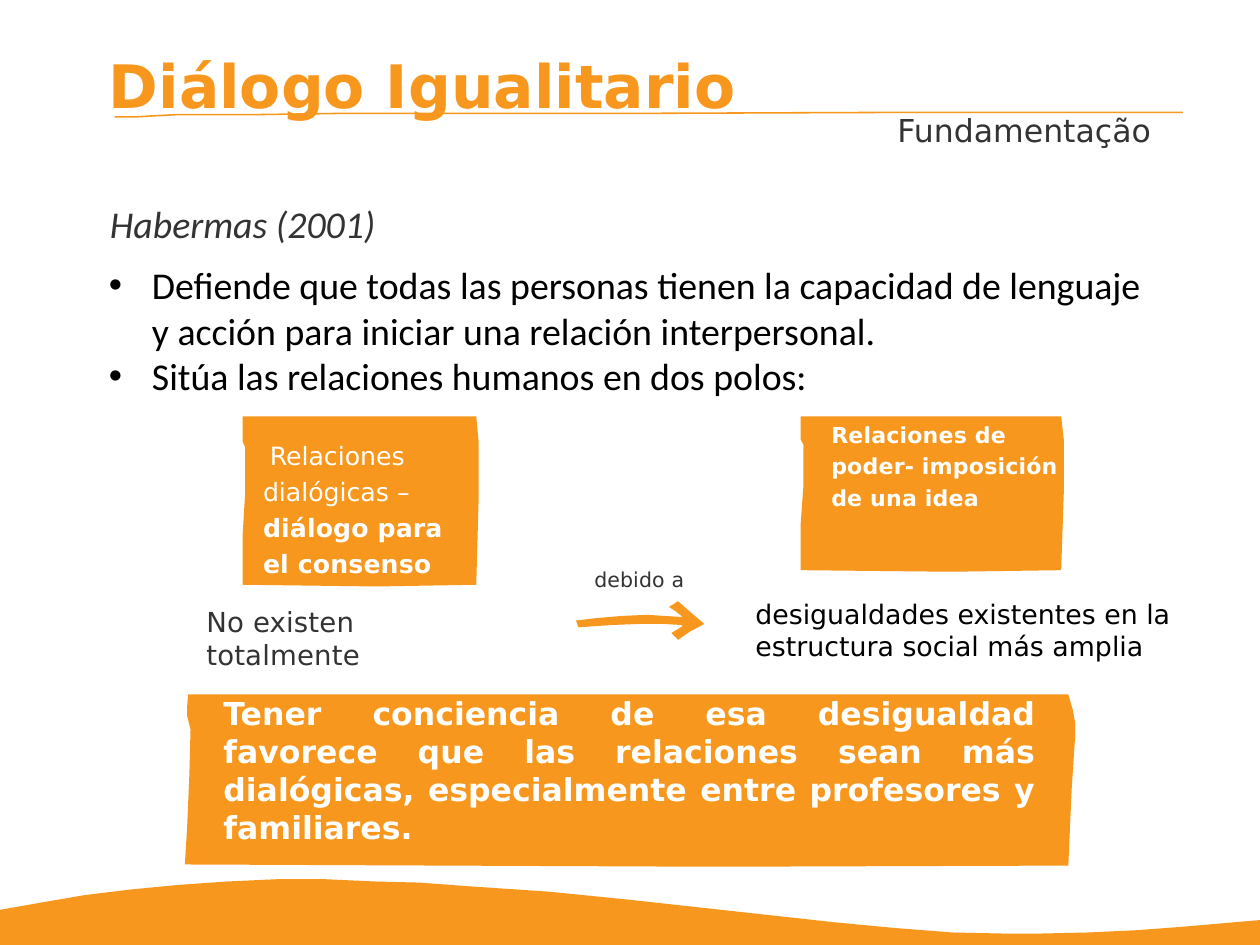
from pptx import Presentation, util as u
from pptx.dml.color import RGBColor
from pptx.enum import text as t
from pptx.oxml.ns import qn
from lxml import etree

INK = {"orange": "F8971D", "grey": "333333", "black": "000000", "white": "FFFFFF"}
SANS, BODY = "DejaVu Sans", "Calibri"


def write(para, words, size=20, font=SANS, ink="grey", bold=False, slant=False,
          track=0, align=t.PP_ALIGN.LEFT, line=None, before=0, left=0, first=0,
          bullet=None):
    """Add a run to a paragraph and set the format of both."""
    run = para.add_run()
    run.text = words
    face = run.font
    face.size, face.name, face.bold, face.italic = u.Pt(size), font, bold, slant
    face.color.rgb = RGBColor.from_string(INK[ink])
    if track:
        run._r.get_or_add_rPr().set("spc", str(round(track * 100)))
    para.alignment = align
    para.space_before = u.Pt(before)
    if line:
        para.line_spacing = line
    props = para._p.get_or_add_pPr()
    props.set("marL", str(u.Inches(left)))
    props.set("indent", str(u.Inches(first)))
    if bullet:
        etree.SubElement(props, qn("a:buFont")).set("typeface", "Arial")
        etree.SubElement(props, qn("a:buChar")).set("char", bullet)


class Deck:
    def __init__(self, wide, high):
        self.prs = Presentation()
        self.prs.slide_width, self.prs.slide_height = u.Inches(wide), u.Inches(high)
        self.slide = self.prs.slides.add_slide(self.prs.slide_layouts[5])

    def frame(self, shape):
        box = shape.text_frame
        box.word_wrap = True
        box.auto_size = t.MSO_AUTO_SIZE.NONE
        box.vertical_anchor = t.MSO_ANCHOR.TOP
        box.margin_left = box.margin_right = box.margin_top = box.margin_bottom = 0
        return box

    def title(self, words, at, **fmt):
        shape = self.slide.shapes.title
        shape.left, shape.top, shape.width, shape.height = map(u.Inches, at)
        write(self.frame(shape).paragraphs[0], words, **fmt)

    def text(self, at, *paras):
        """Each paragraph is a list of (words, format) runs."""
        box = self.frame(self.slide.shapes.add_textbox(*map(u.Inches, at)))
        for i, runs in enumerate(paras):
            para = box.add_paragraph() if i else box.paragraphs[0]
            for words, fmt in runs:
                write(para, words, **fmt)

    def free(self, points, ink="orange", line=None):
        """Draw a filled outline, or an open stroke when a line width is given."""
        spots = [(u.Inches(x), u.Inches(y)) for x, y in points]
        pen = self.slide.shapes.build_freeform(*spots[0])
        pen.add_line_segments(spots[1:], close=line is None)
        shape = pen.convert_to_shape()
        shape.shadow.inherit = False
        color = RGBColor.from_string(INK[ink])
        if line:
            shape.fill.background()
            shape.line.color.rgb = color
            shape.line.width = u.Pt(line)
        else:
            shape.fill.solid()
            shape.fill.fore_color.rgb = color
            shape.line.fill.background()

    def patch(self, x, y, wide, high):
        """Draw the rough-edged card, scaled to its place."""
        self.free([(x + a * wide, y + b * high) for a, b in CARD])


# Outlines: the card in fractions of its size, the rest in inches
CARD = [(0, 0), (0, .15), (.01, .18), (.01, .46), (0, .69), (0, .99), (.57, 1),
        (.99, .99), (1, .49), (1, .15), (.99, 0)]
BANNER = [(1.66, 6.12), (1.65, 6.23), (1.65, 6.31), (1.68, 6.43), (1.67, 6.83),
          (1.65, 7.3), (1.63, 7.62), (6.3, 7.64), (9.42, 7.63), (9.45, 6.95),
          (9.48, 6.49), (9.48, 6.37), (9.46, 6.26), (9.42, 6.12)]
RULE = [(10.43, .99), (8.14, .99), (5.55, 1), (3.01, 1), (2.28, 1.01),
        (1.57, 1.01), (1.38, 1.02), (1.2, 1.03), (1.01, 1.03)]
WAVE = [(0, 8.02), (.34, 7.96), (.75, 7.89), (1.16, 7.84), (1.58, 7.8),
        (2.01, 7.77), (2.44, 7.75), (2.87, 7.75), (3.3, 7.77), (3.7, 7.78),
        (4.1, 7.81), (4.84, 7.86), (5.54, 7.93), (7.36, 8.13), (7.89, 8.18),
        (8.4, 8.22), (8.89, 8.23), (9.13, 8.23), (9.59, 8.22), (10.02, 8.2),
        (10.42, 8.17), (11.11, 8.11), (11.11, 8.33), (0, 8.33)]
ARROW = [(5.08, 5.47), (5.25, 5.45), (5.48, 5.43), (5.71, 5.42), (5.86, 5.43),
         (6.02, 5.44), (5.96, 5.39), (5.9, 5.35), (5.98, 5.3), (6.07, 5.38),
         (6.21, 5.5), (6.08, 5.57), (5.98, 5.64), (5.92, 5.58), (6.02, 5.52),
         (6.01, 5.51), (5.85, 5.5), (5.64, 5.5), (5.39, 5.51), (5.1, 5.53)]


def main():
    deck = Deck(11.11, 8.33)

    # Cards and banner
    deck.patch(7.06, 3.67, 2.32, 1.37)
    deck.patch(2.14, 3.67, 2.08, 1.5)
    deck.free(BANNER)

    # Heading and main points
    deck.title("Diálogo Igualitario", (.96, .43, 9.19, .88), size=38, ink="orange",
               bold=True, line=u.Pt(45.5))
    point = dict(size=24, font=BODY, ink="black", left=.38, first=-.38, bullet="•")
    deck.text((.96, .98, 9.19, 2.58),
              [("Fundamentação", dict(align=t.PP_ALIGN.RIGHT))],
              [("Habermas (2001)", dict(size=24, font=BODY, slant=True, before=33,
                                        left=.01))],
              [("Defiende que todas las personas tienen la capacidad de lenguaje "
                "y acción para iniciar una relación interpersonal.",
                dict(point, before=10))],
              [("Sitúa las relaciones humanos en dos polos:", point)])

    # The two poles
    pole = dict(size=16, ink="white", line=1.19, left=.01, first=.06)
    deck.text((2.31, 3.83, 1.65, 1.42),
              [("Relaciones dialógicas ", pole), ("– ", dict(pole, track=.1)),
               ("diálogo para el consenso", dict(pole, track=.1, bold=True))])
    deck.text((7.31, 3.67, 2.07, 1.33),
              [("Relaciones de poder- imposición de una idea",
                dict(size=14, ink="white", bold=True, track=.1, line=1.19, left=.02))])

    # Cause
    deck.text((1.81, 5.33, 2.7, .3),
              [("No existen totalmente", dict(size=17.5, track=.1, left=.01))])
    deck.text((5.23, 5, .82, .23), [("debido a", dict(size=13, track=.1, left=.01))])
    deck.free(ARROW)
    deck.text((6.66, 5.27, 4.15, .7),
              [("desigualdades existentes en la estructura social más amplia",
                dict(size=17, ink="black"))])

    # Conclusion
    deck.text((1.97, 6.12, 7.16, 1.5),
              [("Tener conciencia de esa desigualdad favorece que las relaciones "
                "sean más dialógicas, especialmente entre profesores y familiares.",
                dict(ink="white", bold=True, align=t.PP_ALIGN.JUSTIFY))])

    # Rule and wave
    deck.free(RULE, line=1)
    deck.free(WAVE)
    deck.prs.save("out.pptx")


if __name__ == "__main__":
    main()
